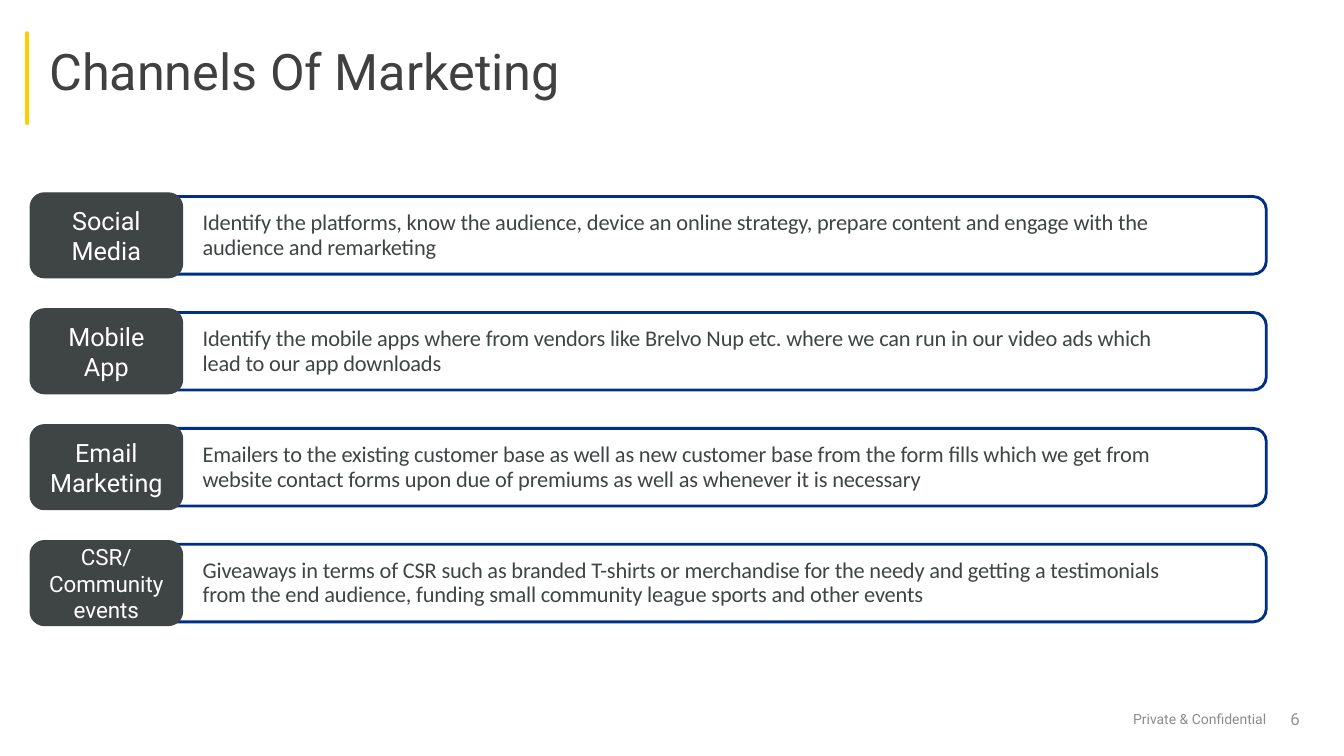
"""Build the Channels Of Marketing slide: four labelled rows with descriptions."""
from math import cos, radians, sin

from lxml.etree import SubElement
from pptx import Presentation
from pptx.dml.color import RGBColor as RGB
from pptx.enum.shapes import MSO_CONNECTOR as CONN, MSO_SHAPE as SHAPE
from pptx.enum.text import MSO_ANCHOR as ANCHOR, PP_ALIGN as ALIGN
from pptx.oxml.ns import qn
from pptx.util import Inches as In, Pt

COLORS = {"accent": "FFCC00", "title": "404040", "footer": "8C8C8C", "number": "939494",
          "outline": "002F87", "dark": "3F4444", "white": "FFFFFF"}
CHANNELS = [
    ("Social Media", 18, "Identify the platforms, know the audience, device an online strategy, "
     "prepare content and engage with the audience and remarketing"),
    ("Mobile App", 18, "Identify the mobile apps where from vendors like Brelvo Nup etc. where we "
     "can run in our video ads which lead to our app downloads"),
    ("Email Marketing", 18, "Emailers to the existing customer base as well as new customer base "
     "from the form fills which we get from website contact forms upon due of premiums as well "
     "as whenever it is necessary"),
    ("CSR/Community events", 16, "Giveaways in terms of CSR such as branded T-shirts or "
     "merchandise for the needy and getting a testimonials from the end audience, funding small "
     "community league sports and other events"),
]
ROW_TOP, ROW_STEP, ROW_H = 1.95, 1.15, 0.77
BADGE_X, BADGE_W, BADGE_H = 0.3, 1.51, 0.84
BOX_X, BOX_RIGHT, RADIUS = 1.73, 12.56, 0.13
TEXT_X, TEXT_W, TEXT_H = 2.01, 9.65, 0.55


def color(name):
    return RGB.from_string(COLORS[name])


def write(s, text, size, tint, font="Roboto", align=ALIGN.LEFT, anchor=ANCHOR.MIDDLE):
    tf = s.text_frame
    tf.word_wrap = True
    tf.vertical_anchor = anchor
    p = tf.paragraphs[0]
    p.text = text
    p.alignment = align
    p.font.size = Pt(size)
    p.font.name = font
    p.font.color.rgb = color(tint)
    return p


prs = Presentation()
prs.slide_width, prs.slide_height = In(13.33), In(7.5)
slide = prs.slides.add_slide(prs.slide_layouts[6])
shapes = slide.shapes

bar = shapes.add_connector(CONN.STRAIGHT, In(0.27), In(0.33), In(0.27), In(1.22))
bar.line.color.rgb = color("accent")
bar.line.width = Pt(3)
bar.line._get_or_add_ln().set("cap", "rnd")
SubElement(bar._element.spPr, qn("a:effectLst"))

title = shapes.add_textbox(In(0.39), In(0.29), In(9.42), In(0.9))
write(title, "Channels Of Marketing", 36, "title").line_spacing = 0.9
footer = shapes.add_textbox(In(11.14), In(7), In(1.59), In(0.27))
write(footer, "Private & Confidential", 10, "footer")
number = shapes.add_textbox(In(11.8), In(6.93), In(1.19), In(0.4))
write(number, "6", 12, "number", align=ALIGN.RIGHT)

for row, (label, label_size, detail) in enumerate(CHANNELS):
    top = ROW_TOP + row * ROW_STEP
    bottom = top + ROW_H
    turns = [radians(22.5 * i) for i in range(5)]
    arc_x = BOX_RIGHT - RADIUS
    upper = [(arc_x + RADIUS * sin(t), top + RADIUS * (1 - cos(t))) for t in turns]
    lower = [(x, top + bottom - y) for x, y in reversed(upper)]
    outline = shapes.build_freeform(In(BOX_X), In(top))
    outline.add_line_segments([(In(x), In(y)) for x, y in upper + lower + [(BOX_X, bottom)]])
    box = outline.convert_to_shape()
    box.shadow.inherit = False
    box.fill.background()
    box.line.color.rgb = color("outline")
    box.line.width = Pt(2.04)

    badge_top = top - (BADGE_H - ROW_H) / 2
    badge = shapes.add_shape(SHAPE.ROUNDED_RECTANGLE, In(BADGE_X), In(badge_top),
                             In(BADGE_W), In(BADGE_H))
    badge.shadow.inherit = False
    badge.fill.solid()
    badge.fill.fore_color.rgb = color("dark")
    badge.line.color.rgb = color("dark")
    badge.line.width = Pt(1)
    write(badge, label, label_size, "white", align=ALIGN.CENTER)

    note = shapes.add_textbox(In(TEXT_X), In(top + 0.1), In(TEXT_W), In(TEXT_H))
    tf = note.text_frame
    tf.margin_left = tf.margin_right = tf.margin_bottom = 0
    tf.margin_top = In(0.04)
    p = write(note, detail, 16, "dark", font="Calibri", anchor=ANCHOR.TOP)
    p.line_spacing = Pt(17.5)
    p.space_before = Pt(3)
    p.runs[0].font._element.set("spc", "-10")

prs.save("out.pptx")
